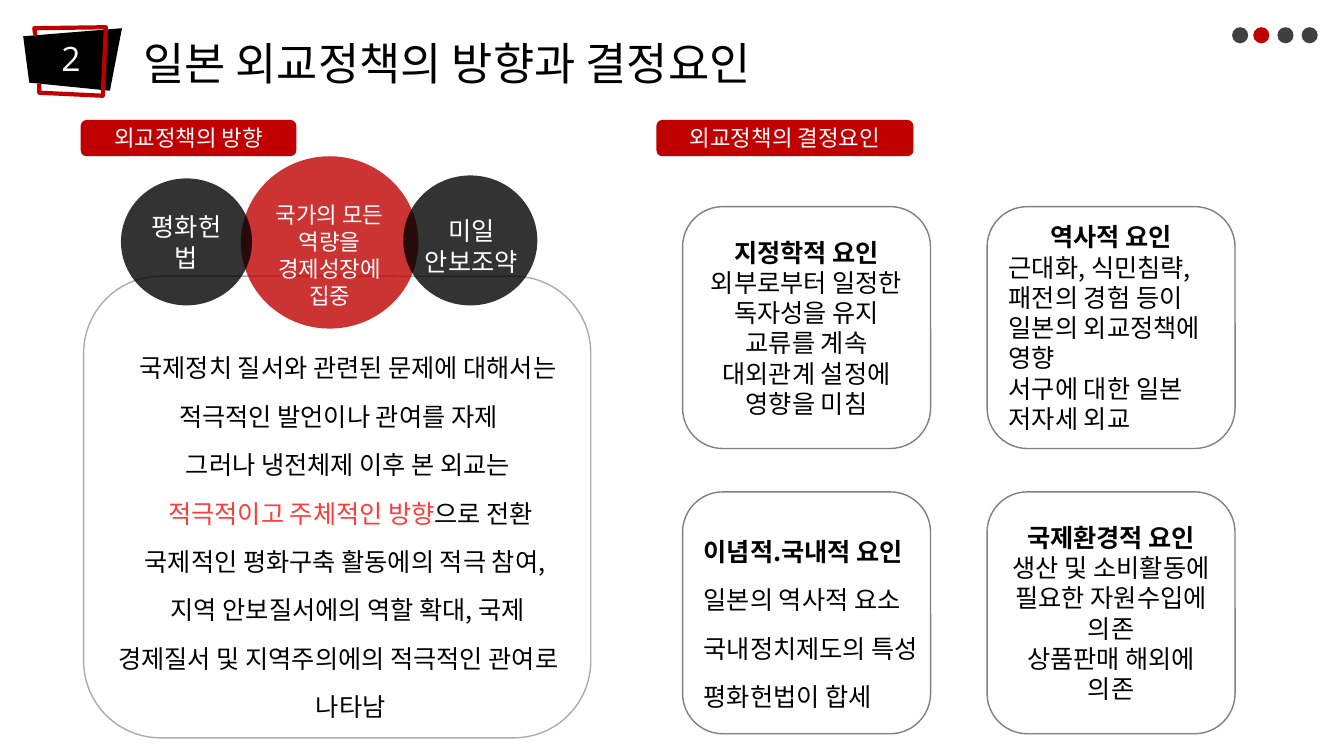
from pptx import Presentation
from pptx.dml.color import RGBColor
from pptx.enum.shapes import MSO_SHAPE as SHAPE
from pptx.enum.text import MSO_ANCHOR as ANCHOR, MSO_AUTO_SIZE as AUTO, PP_ALIGN as ALIGN
from pptx.oxml.ns import qn
from pptx.util import Pt
from lxml.etree import SubElement

PX = 9144
KOREAN, LATIN = "Noto Sans CJK KR", "Open Sans"
BLACK = RGBColor(0x00, 0x00, 0x00)
WHITE = RGBColor(0xFF, 0xFF, 0xFF)
RED = RGBColor(0xC0, 0x00, 0x00)
BRIGHT_RED = RGBColor(0xFF, 0x3B, 0x3B)
DARK = RGBColor(0x40, 0x40, 0x40)
SILVER = RGBColor(0xAF, 0xAB, 0xAB)
GRAY = RGBColor(0x80, 0x80, 0x80)

TITLE = "일본 외교정책의 방향과 결정요인"
TITLE_BOX = (132, 30, 694, 64)
NUMBER, NUMBER_BOX = "2", (51, 33, 38, 50)
BADGE = [(23, 36), (29, 82), (109, 90), (121, 28)]
FRAME = [(35, 35), (34, 28), (105, 27), (102, 95), (39, 92), (39, 83)]
DOTS = [(1222, DARK), (1243, RED), (1267, DARK), (1291, DARK)]
DOT_TOP, DOT_SIZE = 27, 16

HEADINGS = [("외교정책의 방향", (80, 119, 214, 36)),
            ("외교정책의 결정요인", (651, 119, 255, 36))]

PANEL_BOX, PANEL_TEXT_BOX = (83, 274, 503, 458), (93, 327, 485, 391)
PANEL_TEXT = [
    [("국제정치 질서와 관련된 문제에 대해서는 적극적인 발언이나 관여를 자제", BLACK)],
    [("그러나 냉전체제 이후 본 외교는", BLACK)],
    [(" 적극적이고 주체적인 방향", BRIGHT_RED), ("으로 전환", BLACK)],
    [("국제적인 평화구축 활동에의 적극 참여, ", BLACK)],
    [("지역 안보질서에의 역할 확대, 국제 경제질서 및 지역주의에의 적극적인 관여로", BLACK)],
    [(" 나타남", BLACK)],
]
CIRCLES = [
    ((239, 155, 176, 171), RED, "국가의 모든 역량을 경제성장에 집중", 16, (247, 195, 160, 91)),
    ((120, 177, 130, 126), BLACK, "평화헌법", 18, None),
    ((400, 174, 133, 129), BLACK, "미일 안보조약", 18, (402, 209, 131, 71)),
]

CARD_LEFT, CARD_TOP, CARD_W, CARD_H = 677, 205, 246, 240
CARD_STEP_X, CARD_STEP_Y = 302, 283
CARDS = [
    (ALIGN.CENTER, ["지정학적 요인", "외부로부터 일정한 독자성을 유지", "교류를 계속",
                    "대외관계 설정에 영향을 미침"]),
    (ALIGN.LEFT, ["역사적 요인", "근대화, 식민침략, 패전의 경험 등이 일본의 외교정책에 영향",
                  "서구에 대한 일본 저자세 외교"]),
    (ALIGN.JUSTIFY, []),
    (ALIGN.CENTER, ["국제환경적 요인", "생산 및 소비활동에 필요한 자원수입에 의존",
                    "상품판매 해외에 의존"]),
]
DOMESTIC_BOX = (669, 509, 302, 197)
DOMESTIC_TEXT = ["이념적.국내적 요인", "일본의 역사적 요소", "국내정치제도의 특성 ", "평화헌법이 합세"]
INDENT = 19


def emu(box):
    """Turn px lengths into EMU."""
    return [v * PX for v in box]


def paint(sp, fill=None, line=None, width=1, alpha=None):
    """Set fill, opacity and outline, and drop the shadow."""
    sp.shadow.inherit = False
    if fill is None:
        sp.fill.background()
    else:
        sp.fill.solid()
        sp.fill.fore_color.rgb = fill
        if alpha:
            color = sp._element.spPr.find(qn("a:solidFill"))[0]
            SubElement(color, qn("a:alpha")).set("val", str(alpha * 1000))
    if line is None:
        sp.line.fill.background()
    else:
        sp.line.color.rgb = line
        sp.line.width = Pt(width)
    return sp


def add_shape(s, kind, box, **style):
    """Add a painted preset shape."""
    return paint(s.shapes.add_shape(kind, *emu(box)), **style)


def add_outline(s, points, close, **style):
    """Add a painted freeform through the points."""
    builder = s.shapes.build_freeform(*points[0], scale=PX)
    builder.add_line_segments(points[1:], close=close)
    return paint(builder.convert_to_shape(), **style)


def add_box(s, box, wrap=True):
    """Add a text box."""
    sp = s.shapes.add_textbox(*emu(box))
    sp.text_frame.word_wrap = wrap
    return sp


def add_run(p, text, size, color, bold=False, font=KOREAN):
    """Add one formatted run."""
    r = p.add_run()
    r.text = text
    r.font.size, r.font.bold, r.font.name = Pt(size), bold, font
    r.font.color.rgb = color
    SubElement(r._r.get_or_add_rPr(), qn("a:ea")).set("typeface", font)


def write(sp, paragraphs, size, align=ALIGN.CENTER, spacing=None, margin=0, indent=0):
    """Write paragraphs given as lists of (text, color, bold) runs."""
    tf = sp.text_frame
    for i, runs in enumerate(paragraphs):
        p = tf.add_paragraph() if i else tf.paragraphs[0]
        p.alignment = align
        if spacing:
            p.line_spacing = spacing
        if margin or indent:
            pPr = p._p.get_or_add_pPr()
            pPr.set("marL", str(margin * PX))
            pPr.set("indent", str(indent * PX))
        for run in runs:
            add_run(p, run[0], size, *run[1:])


def headed(lines):
    """Make black paragraphs with the first one bold."""
    return [[(text, BLACK, i == 0)] for i, text in enumerate(lines)]


def add_header(s):
    """Add the number badge, title and progress dots."""
    add_outline(s, BADGE, True, fill=BLACK)
    add_outline(s, FRAME, False, line=RED, width=3)
    title = s.shapes.title
    title.left, title.top, title.width, title.height = emu(TITLE_BOX)
    title.text_frame.auto_size = AUTO.NONE
    title.text_frame.vertical_anchor = ANCHOR.TOP
    write(title, [[(TITLE, BLACK)]], 32, ALIGN.LEFT)
    for left, color in DOTS:
        add_shape(s, SHAPE.OVAL, (left, DOT_TOP, DOT_SIZE, DOT_SIZE), fill=color)
    write(add_box(s, NUMBER_BOX, False), [[(NUMBER, WHITE, False, LATIN)]], 24, ALIGN.LEFT)
    for text, box in HEADINGS:
        write(add_shape(s, SHAPE.ROUNDED_RECTANGLE, box, fill=RED), [[(text, WHITE)]], 16)


def add_direction(s):
    """Add the left panel with its three circles."""
    add_shape(s, SHAPE.ROUNDED_RECTANGLE, PANEL_BOX, fill=WHITE, line=SILVER)
    write(add_box(s, PANEL_TEXT_BOX), PANEL_TEXT, 18, spacing=1.6, indent=INDENT)
    for box, color, text, size, text_box in CIRCLES:
        sp = add_shape(s, SHAPE.OVAL, box, fill=color, alpha=80)
        write(add_box(s, text_box) if text_box else sp, [[(text, WHITE)]], size)


def add_factors(s):
    """Add the grid of four factor cards."""
    for i, (align, lines) in enumerate(CARDS):
        row, col = divmod(i, 2)
        box = (CARD_LEFT + col * CARD_STEP_X, CARD_TOP + row * CARD_STEP_Y, CARD_W, CARD_H)
        sp = add_shape(s, SHAPE.ROUNDED_RECTANGLE, box, fill=WHITE, line=GRAY)
        write(sp, headed(lines), 18, align)
        sp.text_frame.paragraphs[0].alignment = ALIGN.CENTER
    write(add_box(s, DOMESTIC_BOX), headed(DOMESTIC_TEXT), 18, ALIGN.JUSTIFY, 1.6, margin=INDENT)


def main():
    """Build and save the slide."""
    prs = Presentation()
    prs.slide_width, prs.slide_height = emu((1333, 750))
    s = prs.slides.add_slide(prs.slide_layouts[5])
    add_header(s)
    add_direction(s)
    add_factors(s)
    prs.save("out.pptx")


if __name__ == "__main__":
    main()
